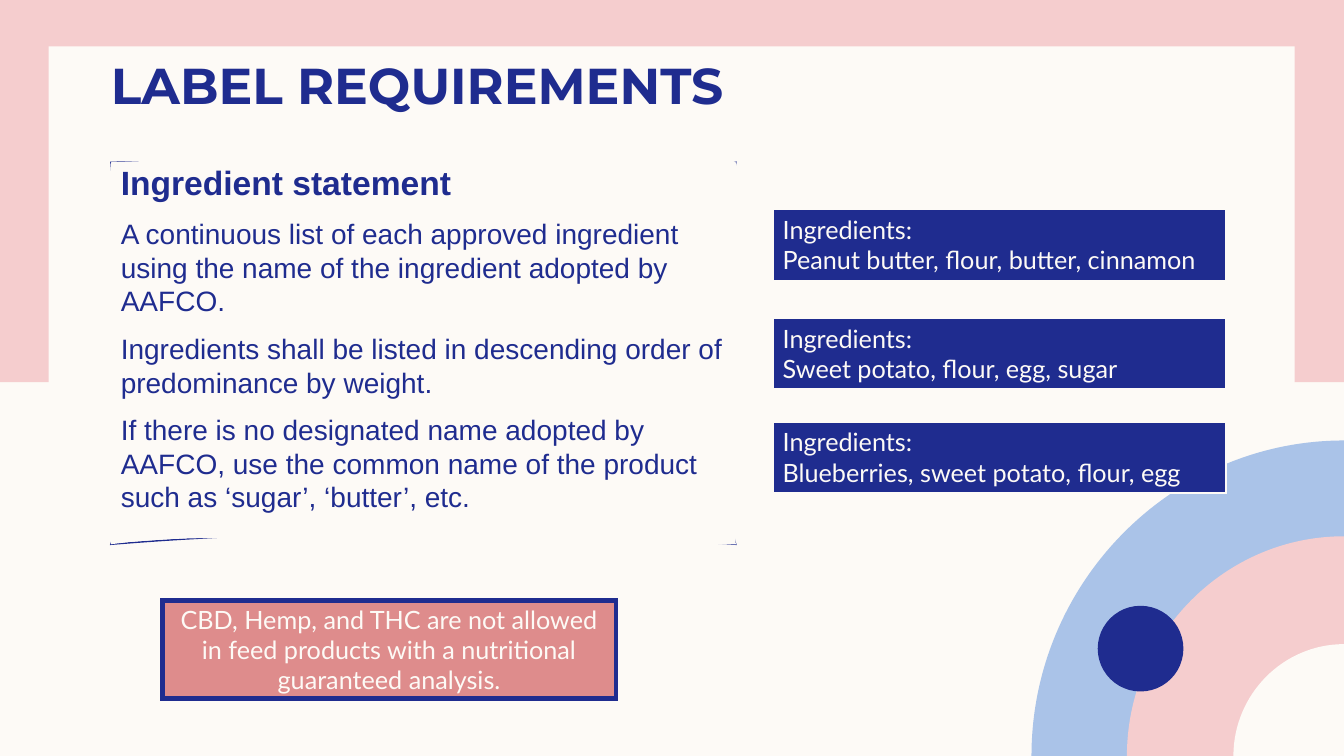
from dataclasses import dataclass

from lxml.etree import SubElement
from pptx import Presentation
from pptx.dml.color import RGBColor
from pptx.enum.shapes import MSO_SHAPE
from pptx.enum.text import MSO_ANCHOR, MSO_AUTO_SIZE, PP_ALIGN
from pptx.oxml.ns import qn
from pptx.util import Inches, Pt


@dataclass(frozen=True)
class Theme:
    cream: str = "FDFAF6"
    pink: str = "F5CDCE"
    rose: str = "DE8C8C"
    sky: str = "AAC3E8"
    navy: str = "1F2C8F"
    title_font: str = "Montserrat"
    body_font: str = "Arial"
    label_font: str = "Lato"
    title_size: int = 36
    heading_size: int = 24
    body_size: int = 20
    label_size: int = 18


THEME = Theme()

# The slide is a grid of 80 columns by 45 rows of square cells
COLUMNS, ROWS = 80, 45
CELL = Inches(7.5) / ROWS
ARC_HANDLE = 0.55

STATEMENT = [
    "Ingredient statement",
    "A continuous list of each approved ingredient using the name of the "
    "ingredient adopted by AAFCO.",
    "Ingredients shall be listed in descending order of predominance by weight.",
    "If there is no designated name adopted by AAFCO, use the common name of "
    "the product such as ‘sugar’, ‘butter’, etc.",
]
LABELS = [
    (12.45, "Peanut butter, flour, butter, cinnamon"),
    (18.93, "Sweet potato, flour, egg, sugar"),
    (25.1, "Blueberries, sweet potato, flour, egg"),
]
WARNING = ("CBD, Hemp, and THC are not allowed in feed products with a "
           "nutritional guaranteed analysis.")

# Hand-drawn panel: each side has two handles and an end
PANEL_BOX = (6.6, 9.66, 37.2, 22.74)
PANEL_START = (6.6, 9.66)
PANEL_OUTLINE = [
    ((24.18, 9.42), (40.08, 10.56), (43.8, 9.66)),
    ((43.32, 12.36), (42.78, 29.16), (43.8, 32.4)),
    ((28.32, 31.5), (17.64, 31.5), (6.6, 32.4)),
    ((7.62, 29.46), (7.08, 15.96), PANEL_START),
]
PANEL_FACE = [
    ((24.72, 9), (28.2, 8.58), (43.8, 9.66)),
    ((44.16, 20.58), (43.38, 21.96), (43.8, 32.4)),
    ((26.52, 32.76), (13.62, 31.38), (6.6, 32.4)),
    ((6.48, 21.36), (6.18, 15.54), PANEL_START),
]


def cells(*counts):
    return [round(count * CELL) for count in counts]


def color(value):
    return RGBColor.from_string(value)


def paint(shape, fill, line=None, width=1):
    shape.shadow.inherit = False
    shape.fill.solid()
    shape.fill.fore_color.rgb = color(fill)
    if line:
        shape.line.color.rgb = color(line)
        shape.line.width = Pt(width)
        SubElement(shape.element.spPr.find(qn("a:ln")), qn("a:miter"), lim="800000")
    else:
        shape.line.fill.background()


def add_block(slide, box, fill, line=None, width=1, kind=MSO_SHAPE.RECTANGLE):
    shape = slide.shapes.add_shape(kind, *cells(*box))
    paint(shape, fill, line, width)
    return shape


def add_curved(slide, box, outlines, fill, line=None):
    """Add a freeform filling box; an outline is (settings, steps)."""
    left, top, width, height = box
    right, bottom = left + width, top + height
    builder = slide.shapes.build_freeform(*cells(left, top), scale=1)
    builder.add_line_segments([cells(*corner) for corner in
                               ((right, top), (right, bottom), (left, bottom))])
    shape = builder.convert_to_shape()
    contours = shape.element.spPr.find(".//" + qn("a:pathLst"))
    contours.clear()
    extent_x, extent_y = cells(width, height)
    for settings, steps in outlines:
        contour = SubElement(contours, qn("a:path"), w=str(extent_x),
                             h=str(extent_y), **settings)
        for command, points in steps:
            step = SubElement(contour, qn(f"a:{command}"))
            for column, row in points:
                x, y = cells(column - left, row - top)
                SubElement(step, qn("a:pt"), x=str(x), y=str(y))
        SubElement(contour, qn("a:close"))
    paint(shape, fill, line)
    return shape


def add_quarter(slide, radius_x, radius_y, fill):
    """Fill a quarter ellipse centred on the bottom right corner."""
    left, top = COLUMNS - radius_x, ROWS - radius_y
    arc = ((left, ROWS - ARC_HANDLE * radius_y),
           (COLUMNS - ARC_HANDLE * radius_x, top), (COLUMNS, top))
    steps = [("moveTo", [(left, ROWS)]), ("cubicBezTo", arc),
             ("lnTo", [(COLUMNS, ROWS)])]
    add_curved(slide, (left, top, radius_x, radius_y), [({}, steps)], fill)


def write(shape, texts, font, size, ink, anchor=MSO_ANCHOR.TOP,
          align=PP_ALIGN.LEFT):
    frame = shape.text_frame
    frame.word_wrap = True
    frame.auto_size = MSO_AUTO_SIZE.NONE
    frame.vertical_anchor = anchor
    frame.text = "\n".join(texts)
    for paragraph in frame.paragraphs:
        paragraph.alignment = align
        paragraph.font.name = font
        paragraph.font.size = Pt(size)
        paragraph.font.color.rgb = color(ink)
    return frame


def write_flush(shape, texts, font, size, first_size):
    """Write navy text without top and bottom margins, the first line bold."""
    frame = write(shape, texts, font, size, THEME.navy)
    frame.margin_left = frame.margin_right = Inches(0.1)
    frame.margin_top = frame.margin_bottom = 0
    first = frame.paragraphs[0]
    first.font.bold = True
    first.font.size = Pt(first_size)
    return frame


def add_title(slide, text):
    title = slide.shapes.title
    title.left, title.top, title.width, title.height = cells(6, 3.24, 69, 3.12)
    write_flush(title, [text], THEME.title_font, THEME.title_size, THEME.title_size)
    # Bring the title in front of the backdrop
    slide.shapes.element.append(title.element)


def add_statement(slide):
    outlines = [
        (settings, [("moveTo", [PANEL_START])]
         + [("cubicBezTo", side) for side in sides])
        for settings, sides in (({"fill": "none"}, PANEL_OUTLINE),
                                ({"stroke": "0"}, PANEL_FACE))
    ]
    panel = add_curved(slide, PANEL_BOX, outlines, THEME.cream, THEME.navy)
    frame = write_flush(panel, STATEMENT, THEME.body_font, THEME.body_size,
                        THEME.heading_size)
    for paragraph in frame.paragraphs[1:]:
        paragraph.space_before = Pt(10)


def add_label(slide, top, ingredients):
    label = add_block(slide, (46, top, 27, 4.26), THEME.navy, THEME.cream, 1.5)
    write(label, ["Ingredients:", ingredients], THEME.label_font,
          THEME.label_size, THEME.cream)


def add_warning(slide):
    warning = add_block(slide, (9.66, 35.76, 27, 5.82), THEME.rose, THEME.navy, 3.25)
    write(warning, [WARNING], THEME.label_font, THEME.label_size, THEME.cream,
          MSO_ANCHOR.MIDDLE, PP_ALIGN.CENTER)


def add_backdrop(slide):
    slide.background.fill.solid()
    slide.background.fill.fore_color.rgb = color(THEME.cream)
    add_block(slide, (0, 0, COLUMNS, 22.74), THEME.pink)
    add_block(slide, (2.9, 2.76, 74.16, 39.54), THEME.cream)
    add_quarter(slide, 18.6, 18.78, THEME.sky)
    add_quarter(slide, 12.92, 13.08, THEME.pink)
    add_quarter(slide, 6.58, 6.66, THEME.cream)
    add_block(slide, (65.34, 36.06, 5.1, 5.1), THEME.navy, kind=MSO_SHAPE.OVAL)


def main():
    presentation = Presentation()
    presentation.slide_width, presentation.slide_height = cells(COLUMNS, ROWS)
    slide = presentation.slides.add_slide(presentation.slide_layouts[5])
    add_backdrop(slide)
    add_title(slide, "LABEL REQUIREMENTS")
    add_statement(slide)
    for top, ingredients in LABELS:
        add_label(slide, top, ingredients)
    add_warning(slide)
    presentation.save("out.pptx")


if __name__ == "__main__":
    main()
